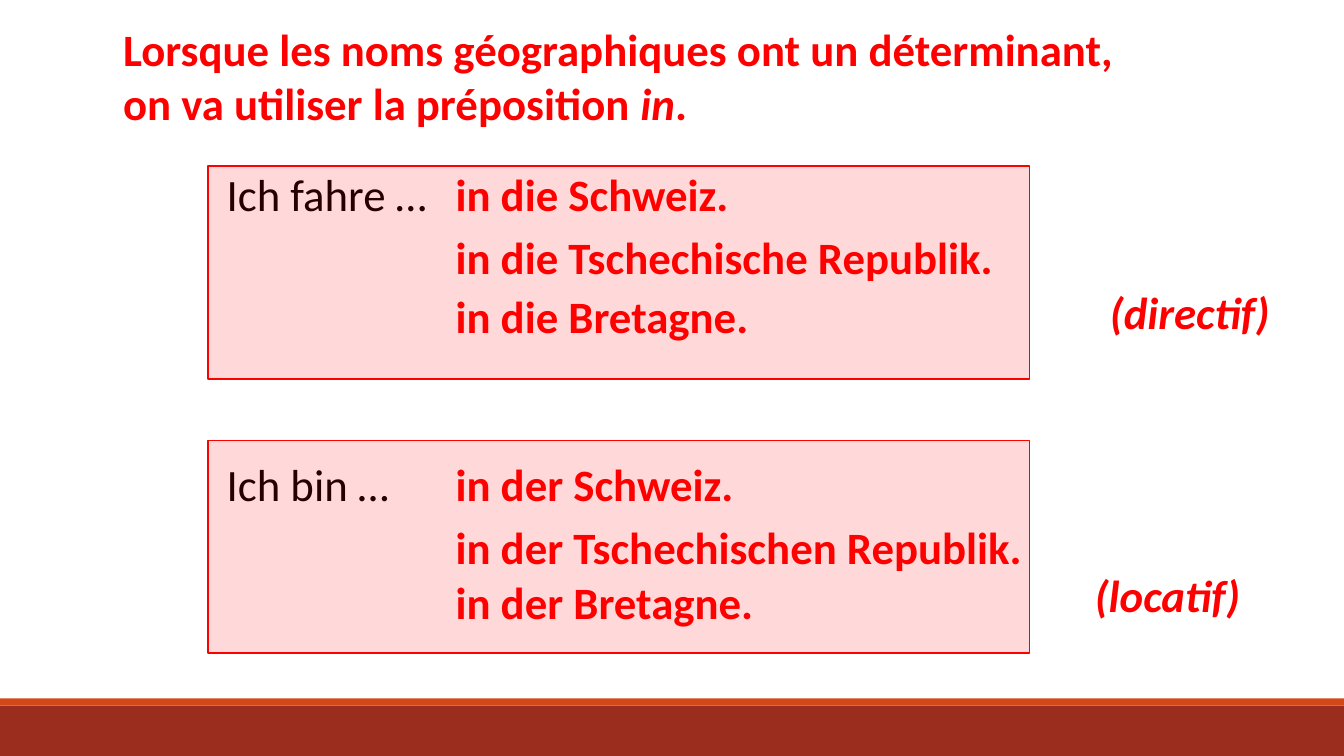
from lxml import etree
from pptx import Presentation
from pptx.dml.color import RGBColor
from pptx.enum.shapes import MSO_SHAPE as Shape
from pptx.enum.text import MSO_ANCHOR as Anchor, MSO_AUTO_SIZE as AutoSize, PP_ALIGN as Align
from pptx.oxml.ns import qn
from pptx.util import Inches, Pt

RED = RGBColor(0xFF, 0x00, 0x00)
BLACK = RGBColor(0x00, 0x00, 0x00)
BRICK = RGBColor(0x9B, 0x2D, 0x1F)
ORANGE = RGBColor(0xD3, 0x48, 0x17)


class SlideBuilder:
    """Holds the text style and the slide being built."""
    font_name = "Calibri"
    font_size = Pt(32)

    def __init__(self, slide):
        self.slide = slide

    def add_runs(self, paragraph, runs, color, bold):
        paragraph.alignment = Align.LEFT
        for text, italic in runs:
            run = paragraph.add_run()
            run.text = text
            font = run.font
            font.name, font.size = self.font_name, self.font_size
            font.bold, font.italic = bold, italic
            font.color.rgb = color

    def title(self, left, top, width, height, lines):
        shape = self.slide.shapes.title
        shape.left, shape.top = Inches(left), Inches(top)
        shape.width, shape.height = Inches(width), Inches(height)
        frame = shape.text_frame
        frame.word_wrap = True
        frame.auto_size = AutoSize.NONE
        frame.vertical_anchor = Anchor.TOP
        for index, runs in enumerate(lines):
            paragraph = frame.add_paragraph() if index else frame.paragraphs[0]
            self.add_runs(paragraph, runs, RED, True)

    def label(self, left, top, width, text, color=RED, bold=True, italic=False):
        shape = self.slide.shapes.add_textbox(
            Inches(left), Inches(top), Inches(width), Inches(0.64))
        shape.text_frame.word_wrap = True
        self.add_runs(shape.text_frame.paragraphs[0], [(text, italic)], color, bold)

    def rectangle(self, left, top, width, height, fill, line=None, opacity=None):
        shape = self.slide.shapes.add_shape(
            Shape.RECTANGLE, Inches(left), Inches(top), Inches(width), Inches(height))
        shape.shadow.inherit = False
        shape.fill.solid()
        shape.fill.fore_color.rgb = fill
        if opacity is not None:
            color = shape.fill._xPr.find(qn("a:solidFill"))[0]
            etree.SubElement(color, qn("a:alpha"), val=str(opacity * 1000))
        if line is None:
            shape.line.fill.background()
        else:
            shape.line.color.rgb = line
            shape.line.width = Pt(1.25)


def main():
    presentation = Presentation()
    presentation.slide_width = Inches(13.33)
    presentation.slide_height = Inches(7.5)
    builder = SlideBuilder(presentation.slides.add_slide(presentation.slide_layouts[5]))

    # Footer bands
    builder.rectangle(0, 7, 13.33, 0.5, BRICK)
    builder.rectangle(0, 6.93, 13.33, 0.07, ORANGE)

    # Rule
    builder.title(1.12, 0.17, 10.41, 1.18, [
        [("Lorsque les noms géographiques ont un déterminant,", False)],
        [("on va utiliser la préposition ", False), ("in", True), (".", False)],
    ])

    # Example groups: opening, frame top, places with tops, case with position
    groups = [
        ("Ich fahre …", 1.65,
         [("in die Schweiz.", 1.6), ("in die Tschechische Republik.", 2.23),
          ("in die Bretagne.", 2.82)],
         ("(directif)", 10.91, 2.78)),
        ("Ich bin …", 4.37,
         [("in der Schweiz.", 4.48), ("in der Tschechischen Republik.", 5.11),
          ("in der Bretagne.", 5.65)],
         ("(locatif)", 10.76, 5.58)),
    ]
    for opening, frame_top, places, (case, case_left, case_top) in groups:
        builder.label(2.15, places[0][1], 2.27, opening, BLACK, bold=False)
        for place, top in places:
            builder.label(4.42, top, 6.3, place)
        builder.label(case_left, case_top, 2.3, case, italic=True)
        builder.rectangle(2.06, frame_top, 8.15, 2.11, RED, line=RED, opacity=15)

    presentation.save("out.pptx")


if __name__ == "__main__":
    main()
